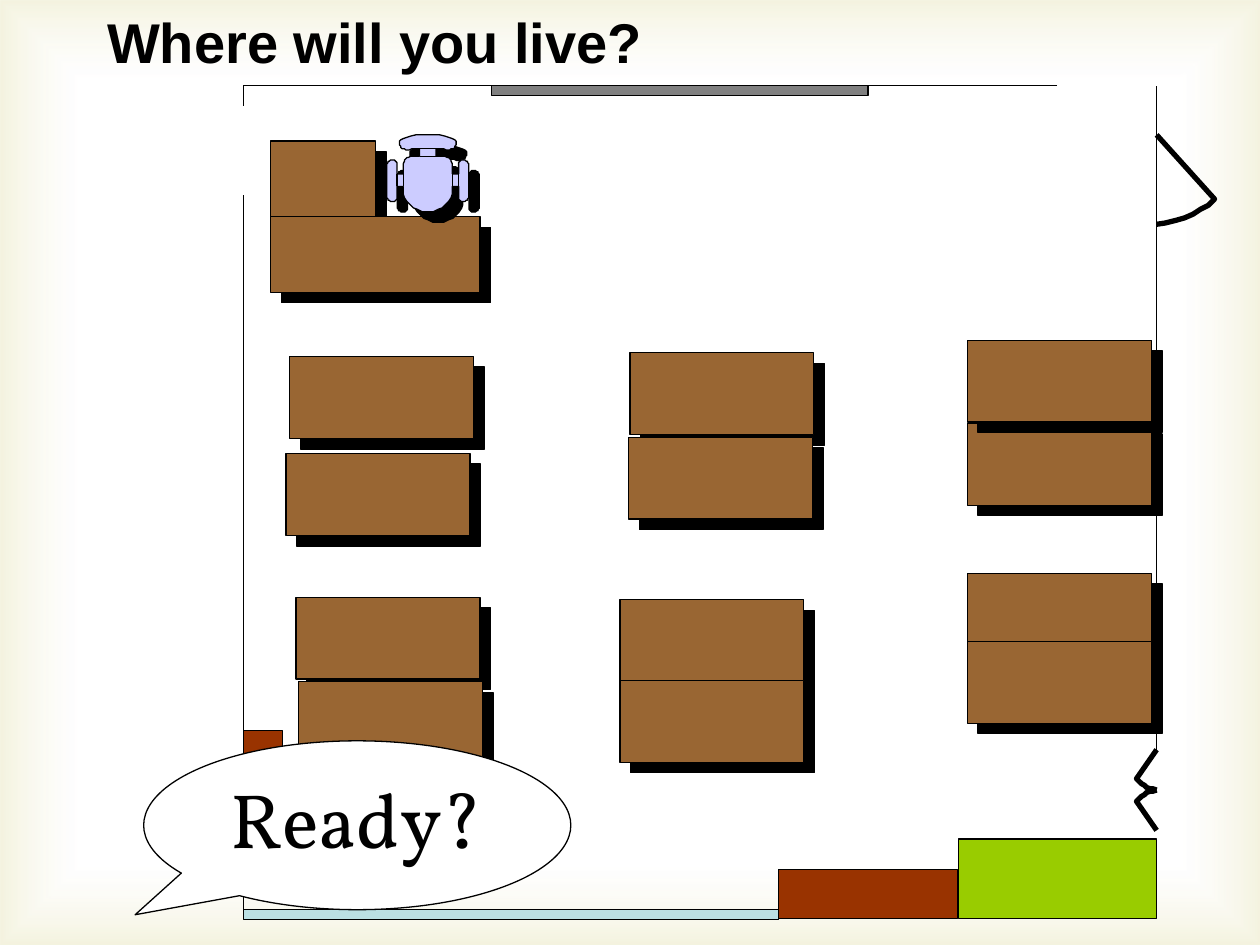
from dataclasses import dataclass

from pptx import Presentation
from pptx.dml.color import RGBColor
from pptx.enum import shapes, text
from pptx.oxml import parse_xml
from pptx.oxml.ns import nsdecls
from pptx.util import Pt

PX = 9144


@dataclass(frozen=True)
class Theme:
    ink: str = "000000"
    paper: str = "FFFFFF"
    edge: str = "D1CA75"
    desk: str = "996633"
    chair: str = "CCCCFF"
    shelf: str = "993300"
    rug: str = "99CC00"
    window: str = "BBE0E3"
    board: str = "808080"
    title_font: str = "Arial"
    callout_font: str = "Vollkorn"
    title_size: int = 32
    callout_size: int = 44
    thin: float = 0.75
    thick: float = 3


THEME = Theme()


def emu(*lengths):
    return [length * PX for length in lengths]


def style(shape, fill=None, weight=THEME.thin):
    shape.shadow.inherit = False
    if fill:
        shape.fill.solid()
        shape.fill.fore_color.rgb = RGBColor.from_string(fill)
    else:
        shape.fill.background()
    shape.line.color.rgb = RGBColor.from_string(THEME.ink)
    shape.line.width = Pt(weight)
    return shape


def cast_shadow(shape):
    effects = shape._element.spPr.find("{*}effectLst")
    effects.append(parse_xml(
        f'<a:outerShdw {nsdecls("a")} dist="107950" dir="2700000" algn="ctr" rotWithShape="0">'
        f'<a:srgbClr val="{THEME.ink}"/></a:outerShdw>'))


def block(slide, box, fill, preset=shapes.MSO_SHAPE.RECTANGLE):
    return style(slide.shapes.add_shape(preset, *emu(*box)), fill)


def outline(slide, left, top, contours, fill=None, weight=THEME.thin):
    builder = None
    for points, closed in contours:
        (x, y), *rest = [(left + px, top + py) for px, py in points]
        if builder is None:
            builder = slide.shapes.build_freeform(x, y, scale=PX)
        else:
            builder.move_to(x, y)
        builder.add_line_segments(rest, close=closed)
    return style(builder.convert_to_shape(), fill, weight)


def wall(slide, x1, y1, x2, y2):
    line = slide.shapes.add_connector(shapes.MSO_CONNECTOR.STRAIGHT, *emu(x1, y1, x2, y2))
    line.line.color.rgb = RGBColor.from_string(THEME.ink)
    line.line.width = Pt(THEME.thin)
    line._element.spPr.append(parse_xml(f'<a:effectLst {nsdecls("a")}/>'))


def backdrop(slide, box):
    frame = block(slide, box, THEME.paper)
    frame.line.fill.background()
    properties = frame._element.spPr
    properties.replace(properties.find("{*}solidFill"), parse_xml(
        f'<a:gradFill {nsdecls("a")} rotWithShape="1"><a:gsLst>'
        f'<a:gs pos="83000"><a:srgbClr val="{THEME.paper}"><a:alpha val="11000"/></a:srgbClr></a:gs>'
        f'<a:gs pos="100000"><a:srgbClr val="{THEME.edge}"><a:alpha val="23000"/></a:srgbClr></a:gs>'
        '</a:gsLst><a:path path="rect">'
        '<a:fillToRect l="50000" t="50000" r="50000" b="50000"/></a:path></a:gradFill>'))


def pupil_desks(slide, corners, width=146, height=65):
    for left, top in corners:
        cast_shadow(block(slide, (left, top, width, height), THEME.desk))


def teacher_desk(slide, left, top, width, height):
    middle, half = width // 2, height // 2
    edge = [(middle, half), (middle, 0), (0, 0), (0, height),
            (width, height), (width, half), (0, half)]
    cast_shadow(outline(slide, left, top, [(edge, True)], THEME.desk))


def smooth(segments):
    points = [segments[0]]
    for segment in segments[1:]:
        if len(segment) == 2:
            points.append(segment)
            continue
        x0, y0 = points[-1]
        x1, y1, x2, y2, x3, y3 = segment
        for step in range(1, 9):
            t = step / 8
            a, b, c, d = (1 - t) ** 3, 3 * t * (1 - t) ** 2, 3 * t * t * (1 - t), t ** 3
            points.append((a * x0 + b * x1 + c * x2 + d * x3,
                           a * y0 + b * y1 + c * y2 + d * y3))
    return points


def teacher_chair(slide, left, top, width):
    half = smooth([
        (32, 0), (18, 0, 10, 2, 10, 7), (10, 10, 13, 13, 20, 11),
        (26, 11), (26, 17), (20, 17), (16, 17, 13, 20, 13, 24),
        (13, 31), (8, 31), (8, 24), (8, 22, 7, 20, 4, 20), (2, 20, 0, 22, 0, 24),
        (0, 49), (0, 51, 2, 53, 4, 53), (7, 53, 8, 51, 8, 49),
        (8, 41), (13, 41), (13, 44), (13, 52, 20, 61, 32, 61)])
    mirrored = [(width - x, y) for x, y in reversed(half)]
    arm_seams = [[(x, 31), (x, 41)] for x in (8, 13, width - 13, width - 8)]
    back_seams = [[(26, y), (width - 26, y)] for y in (11, 17)]
    contours = [(half + mirrored, True)]
    contours += [(seam, False) for seam in arm_seams + back_seams]
    cast_shadow(outline(slide, left, top, contours, THEME.chair))


def door(slide, left, top):
    swing = [(0, 0), (46, 51), (41, 56), (35, 59), (29, 63), (22, 66), (15, 68), (7, 70), (0, 71)]
    outline(slide, left, top, [(swing, False)], weight=THEME.thick)


def folding_door(slide, left, top, height):
    upper = [(0, 0), (-16, 23), (-14, 25), (-12, 27), (-10, 28),
             (-8, 30), (-5, 31), (-3, 31), (0, 32)]
    lower = [(x, height - y) for x, y in upper]
    for leaf in (upper, lower):
        outline(slide, left, top, [(leaf, False)], weight=THEME.thick)


def room(slide, left, top, width, height):
    right, bottom = left + width, top + height
    block(slide, (right - 157, bottom - 63, 157, 63), THEME.rug)
    folding_door(slide, right, 595, 64)
    block(slide, (left, bottom - 7, 425, 8), THEME.window)
    block(slide, (left + 425, bottom - 39, 142, 39), THEME.shelf)
    wall(slide, left, top + 87, left, bottom)
    wall(slide, right, 596, right, top)
    wall(slide, right - 79, top, left, top)
    wall(slide, left, top + 16, left, top)
    block(slide, (left + 197, top, 299, 8), THEME.board)
    block(slide, (left, 580, 31, 126), THEME.shelf)


def write(shape, words, font, size, align, anchor, bold=False):
    frame = shape.text_frame
    frame.text = words
    frame.auto_size = text.MSO_AUTO_SIZE.NONE
    frame.vertical_anchor = anchor
    paragraph = frame.paragraphs[0]
    paragraph.alignment = align
    paragraph.font.name = font
    paragraph.font.size = Pt(size)
    paragraph.font.bold = bold
    paragraph.font.color.rgb = RGBColor.from_string(THEME.ink)


def heading(slide, box):
    title = slide.shapes.title
    title.left, title.top, title.width, title.height = emu(*box)
    write(title, "Where will you live?", THEME.title_font, THEME.title_size,
          text.PP_ALIGN.LEFT, text.MSO_ANCHOR.BOTTOM, bold=True)
    title.text_frame.word_wrap = False
    slide.shapes._spTree.append(title._element)


def callout(slide, box):
    bubble = block(slide, box, THEME.paper, shapes.MSO_SHAPE.OVAL_CALLOUT)
    bubble.adjustments[0], bubble.adjustments[1] = -0.52, 0.53
    write(bubble, "Ready?", THEME.callout_font, THEME.callout_size,
          text.PP_ALIGN.CENTER, text.MSO_ANCHOR.TOP)


def main():
    deck = Presentation()
    deck.slide_width, deck.slide_height = emu(1000, 750)
    slide = deck.slides.add_slide(deck.slide_layouts[5])
    backdrop(slide, (0, 0, 1000, 750))
    pupil_desks(slide, [(230, 283), (227, 360), (235, 474), (237, 541),
                        (768, 336), (768, 455), (768, 509),
                        (500, 280), (499, 347), (492, 476), (492, 540), (768, 270)])
    teacher_desk(slide, 215, 112, 166, 120)
    door(slide, 918, 107)
    teacher_chair(slide, 307, 107, 65)
    room(slide, 193, 68, 725, 661)
    heading(slide, (75, 0, 457, 64))
    callout(slide, (114, 588, 339, 134))
    deck.save("out.pptx")


if __name__ == "__main__":
    main()
